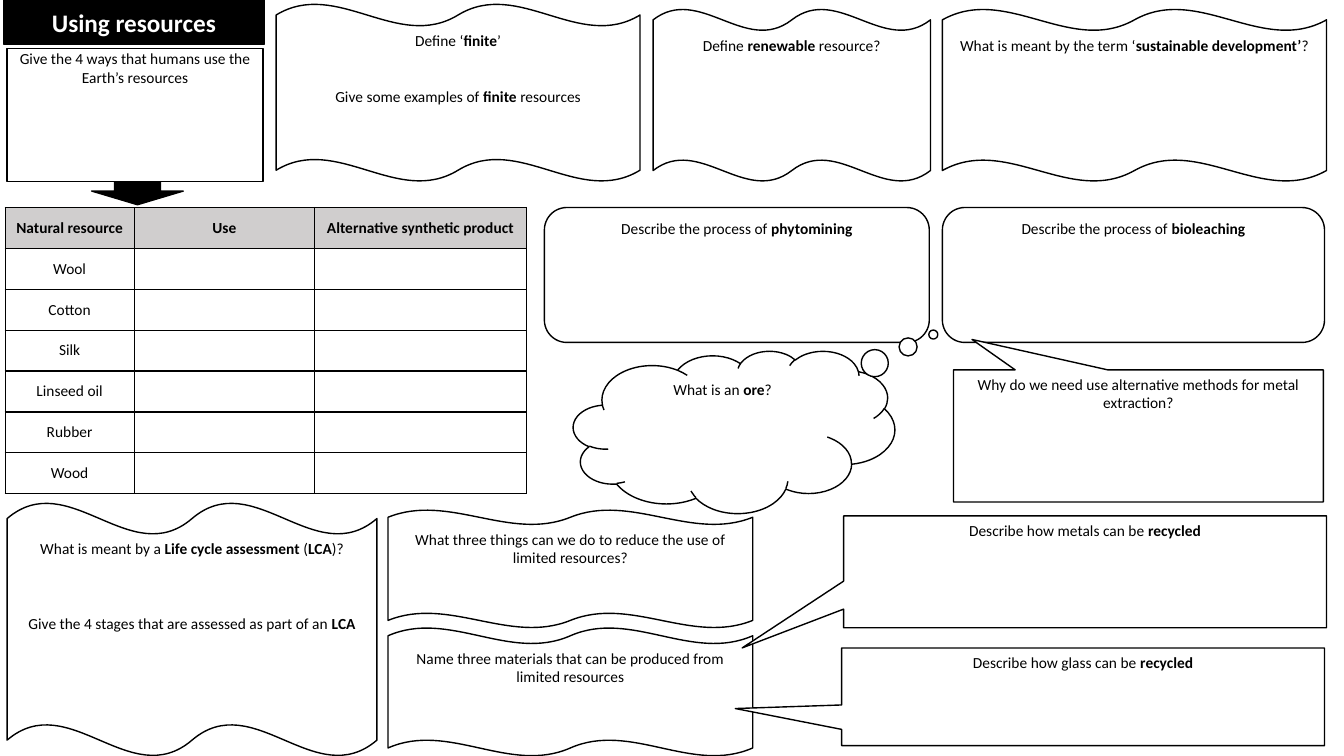
"""Build a one-page revision worksheet on using resources."""
from dataclasses import dataclass

import pptx
import pptx.dml.color
import pptx.enum.shapes
import pptx.enum.text
import pptx.oxml
import pptx.oxml.ns
import pptx.util

Cm = pptx.util.Cm
Pt = pptx.util.Pt
Kind = pptx.enum.shapes.MSO_SHAPE
Anchor = pptx.enum.text.MSO_ANCHOR
BLACK = pptx.dml.color.RGBColor(0x00, 0x00, 0x00)
WHITE = pptx.dml.color.RGBColor(0xFF, 0xFF, 0xFF)
GREY = pptx.dml.color.RGBColor(0xD0, 0xCE, 0xCE)
FONT = "Calibri"
BODY_SIZE = 11
BOLD_MARK = "*"


@dataclass(frozen=True)
class Panel:
    kind: Kind
    left: float
    top: float
    width: float
    height: float
    questions: tuple[str, ...] = ()
    gap: float = 0
    pointer: tuple[float, ...] = ()
    inset: float = 0.13
    fill: pptx.dml.color.RGBColor = WHITE


PANELS = (
    Panel(Kind.DOWN_ARROW, 2.31, 4.47, 2.31, 0.69, fill=BLACK),
    Panel(Kind.RECTANGLE, 0.18, 1.22, 6.45, 3.35,
          ("Give the 4 ways that humans use the Earth’s resources",), inset=0.02),
    Panel(Kind.DOUBLE_WAVE, 6.96, 0.1, 9.17, 4.47,
          ("Define ‘*finite*’", "Give some examples of *finite *resources"), gap=26.8),
    Panel(Kind.DOUBLE_WAVE, 16.46, 0.23, 6.99, 4.34, ("Define *renewable* resource?",)),
    Panel(Kind.DOUBLE_WAVE, 23.75, 0.23, 9.68, 4.34,
          ("What is meant by the term ‘*sustainable development’*?",)),
    Panel(Kind.ROUNDED_RECTANGLE, 13.72, 5.23, 9.7, 3.4,
          ("Describe the process of *phytomining*",)),
    Panel(Kind.ROUNDED_RECTANGLE, 23.75, 5.23, 9.63, 3.4,
          ("Describe the process of *bioleaching*",)),
    Panel(Kind.CLOUD_CALLOUT, 14.45, 8.84, 8.1, 4.09,
          ("What is an *ore*?",), pointer=(0.62, -0.6)),
    Panel(Kind.RECTANGULAR_CALLOUT, 24.03, 9.32, 9.32, 3.33,
          ("Why do we need use alternative methods for metal extraction?",),
          pointer=(-0.45, -0.73)),
    Panel(Kind.DOUBLE_WAVE, 0.18, 12.67, 9.32, 6.38,
          ("What is meant by a *Life cycle assessment *(*LCA*)?",
           "Give the 4 stages that are assessed as part of an *LCA*"), gap=40.2),
    Panel(Kind.DOUBLE_WAVE, 9.78, 12.85, 9.19, 2.97,
          ("What three things can we do to reduce the use of limited resources?",)),
    Panel(Kind.DOUBLE_WAVE, 9.78, 15.82, 9.19, 3.23,
          ("Name three materials that can be produced from limited resources",)),
    Panel(Kind.RECTANGULAR_CALLOUT, 21.26, 13, 12.17, 2.82,
          ("Describe how metals can be *recycled*",), pointer=(-0.71, 0.68)),
    Panel(Kind.RECTANGULAR_CALLOUT, 21.21, 16.33, 12.17, 2.46,
          ("Describe how glass can be *recycled*",), pointer=(-0.72, 0.12)),
)
HEADINGS = ("Natural resource", "Use", "Alternative synthetic product")
RESOURCES = ("Wool", "Cotton", "Silk", "Linseed oil", "Rubber", "Wood")
COLUMN_WIDTHS = (3.25, 4.55, 5.33)
ROW_HEIGHT = 1.03


def write(paragraph, text: str, size: float = BODY_SIZE, color=BLACK) -> None:
    paragraph.alignment = pptx.enum.text.PP_ALIGN.CENTER
    for index, part in enumerate(text.split(BOLD_MARK)):
        if part:
            span = paragraph.add_run()
            span.text = part
            span.font.name = FONT
            span.font.size = Pt(size)
            span.font.bold = index % 2 == 1
            span.font.color.rgb = color


def paint(shape, fill) -> None:
    shape.fill.solid()
    shape.fill.fore_color.rgb = fill
    shape.line.color.rgb = BLACK
    shape.line.width = Pt(1)


def add_title(page) -> None:
    title = page.shapes.title
    title.left, title.top, title.width, title.height = Cm(0.1), Cm(0), Cm(6.55), Cm(1.12)
    paint(title, BLACK)
    frame = title.text_frame
    frame.auto_size = pptx.enum.text.MSO_AUTO_SIZE.NONE
    frame.vertical_anchor = Anchor.MIDDLE
    write(frame.paragraphs[0], "*Using resources*", 18, WHITE)


def add_panel(page, panel: Panel) -> None:
    box = page.shapes.add_shape(panel.kind, Cm(panel.left), Cm(panel.top),
                                Cm(panel.width), Cm(panel.height))
    box.shadow.inherit = False
    paint(box, panel.fill)
    for index, value in enumerate(panel.pointer):
        box.adjustments[index] = value
    frame = box.text_frame
    frame.word_wrap = True
    frame.vertical_anchor = Anchor.TOP
    frame.margin_top = Cm(panel.inset)
    for index, question in enumerate(panel.questions):
        paragraph = frame.add_paragraph() if index else frame.paragraphs[0]
        paragraph.space_before = Pt(panel.gap if index else 0)
        write(paragraph, question)


def add_borders(cell) -> None:
    properties = cell._tc.get_or_add_tcPr()
    for position, side in enumerate(("lnL", "lnR", "lnT", "lnB")):
        properties.insert(position, pptx.oxml.parse_xml(
            f'<a:{side} {pptx.oxml.ns.nsdecls("a")} w="{Pt(1)}"><a:solidFill>'
            f'<a:srgbClr val="{BLACK}"/></a:solidFill></a:{side}>'))


def add_resource_table(page) -> None:
    rows = [tuple(f"*{heading}*" for heading in HEADINGS)]
    rows += [(resource, "", "") for resource in RESOURCES]
    table = page.shapes.add_table(len(rows), len(HEADINGS), Cm(0.13), Cm(5.23),
                                  Cm(sum(COLUMN_WIDTHS)), Cm(ROW_HEIGHT * len(rows))).table
    for column, width in zip(table.columns, COLUMN_WIDTHS):
        column.width = Cm(width)
    for row_index, texts in enumerate(rows):
        table.rows[row_index].height = Cm(ROW_HEIGHT)
        for column_index, text in enumerate(texts):
            cell = table.cell(row_index, column_index)
            cell.fill.solid()
            cell.fill.fore_color.rgb = WHITE if row_index else GREY
            cell.vertical_anchor = Anchor.MIDDLE
            cell.margin_top = cell.margin_bottom = Cm(0)
            add_borders(cell)
            write(cell.text_frame.paragraphs[0], text)


def main() -> None:
    deck = pptx.Presentation()
    deck.slide_width, deck.slide_height = Cm(33.87), Cm(19.05)
    page = deck.slides.add_slide(deck.slide_layouts.get_by_name("Title Only"))
    add_title(page)
    for panel in PANELS:
        add_panel(page, panel)
    add_resource_table(page)
    deck.save("out.pptx")


if __name__ == "__main__":
    main()
